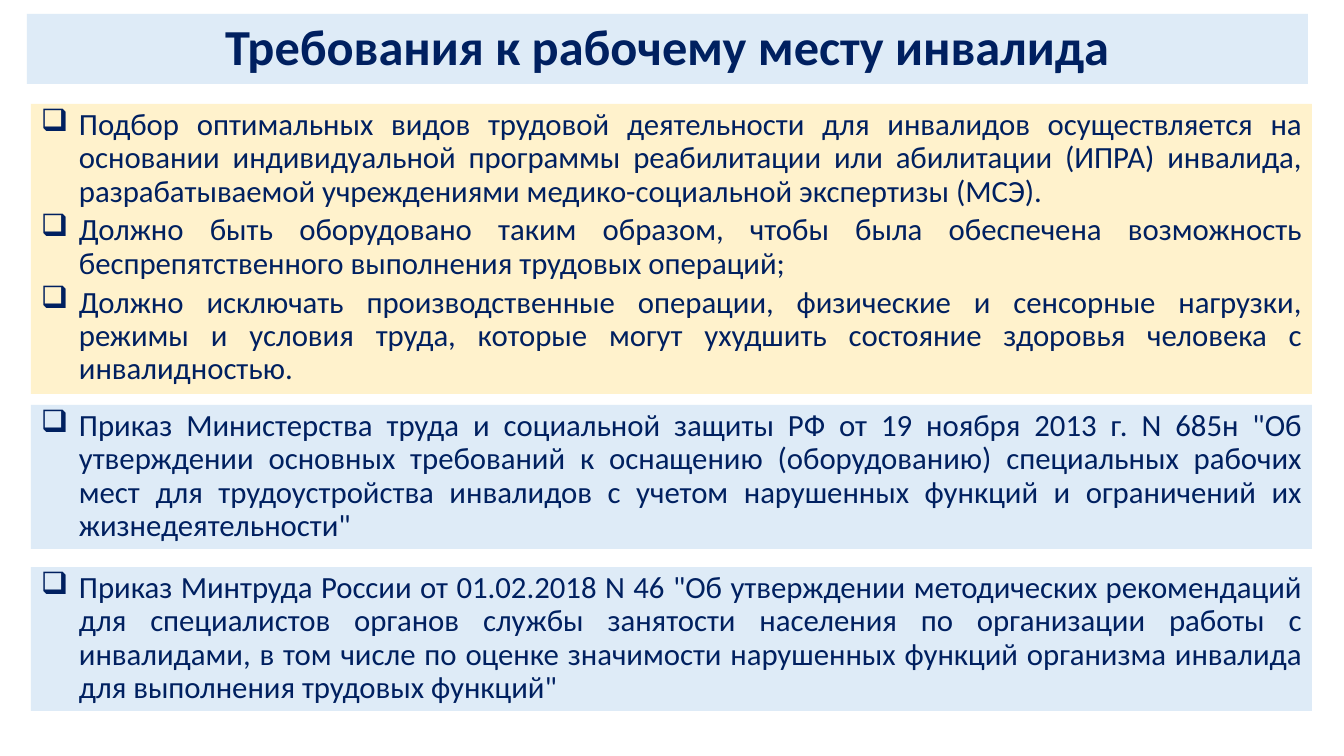
from lxml import etree
from pptx import Presentation
from pptx.dml.color import RGBColor
from pptx.enum import shapes, text
from pptx.oxml import ns
from pptx.util import Emu, Pt

SCALE = 914400 / 100.8
COLORS = {"navy": "002060", "blue": "DEEBF7", "cream": "FFF2CC"}
TITLE = "Требования к рабочему месту инвалида"
NEEDS = [
    "Подбор оптимальных видов трудовой деятельности для инвалидов осуществляется на основании индивидуальной программы реабилитации или абилитации (ИПРА) инвалида, разрабатываемой учреждениями медико-социальной экспертизы (МСЭ).",
    "Должно быть оборудовано таким образом, чтобы была обеспечена возможность беспрепятственного выполнения трудовых операций;",
    "Должно исключать производственные операции, физические и сенсорные нагрузки, режимы и условия труда, которые могут ухудшить состояние здоровья человека с инвалидностью.",
]
ORDERS = [
    'Приказ Министерства труда и социальной защиты РФ от 19 ноября 2013 г. N 685н "Об утверждении основных требований к оснащению (оборудованию) специальных рабочих мест для трудоустройства инвалидов с учетом нарушенных функций и ограничений их жизнедеятельности"',
    'Приказ Минтруда России от 01.02.2018 N 46 "Об утверждении методических рекомендаций для специалистов органов службы занятости населения по организации работы с инвалидами, в том числе по оценке значимости нарушенных функций организма инвалида для выполнения трудовых функций"',
]


def px(n):
    return Emu(round(n * SCALE))


def color(name):
    return RGBColor.from_string(COLORS[name])


def panel(slide, left, top, height, fill, anchor):
    box = slide.shapes.add_shape(
        shapes.MSO_SHAPE.RECTANGLE, px(left), px(top), px(1281), px(height))
    box.shadow.inherit = False
    box.fill.solid()
    box.fill.fore_color.rgb = color(fill)
    box.line.fill.background()
    frame = box.text_frame
    frame.word_wrap = True
    frame.vertical_anchor = anchor
    return frame


def style(para, words, size, align, bold=False):
    para.text = words
    para.alignment = align
    para.line_spacing = 0.9
    font = para.font
    font.name = "Calibri"
    font.size = Pt(size)
    font.bold = bold
    font.color.rgb = color("navy")


def bullet(para):
    props = para._p.get_or_add_pPr()
    props.set("marL", str(px(38)))
    props.set("indent", str(-px(38)))
    mark = etree.Element(ns.qn("a:buChar"), char="❑")
    props.find(ns.qn("a:defRPr")).addprevious(mark)


def points(slide, top, height, fill, items):
    frame = panel(slide, 31, top, height, fill, text.MSO_ANCHOR.TOP)
    for i, words in enumerate(items):
        para = frame.add_paragraph() if i else frame.paragraphs[0]
        para.space_before = para.space_after = Pt(2)
        style(para, words, 22, text.PP_ALIGN.JUSTIFY)
        bullet(para)


def main():
    deck = Presentation()
    deck.slide_width, deck.slide_height = px(1344), px(756)
    slide = deck.slides.add_slide(deck.slide_layouts[6])
    head = panel(slide, 27, 14, 70, "blue", text.MSO_ANCHOR.MIDDLE)
    style(head.paragraphs[0], TITLE, 36, text.PP_ALIGN.CENTER, True)
    points(slide, 104, 290, "cream", NEEDS)
    for i, order in enumerate(ORDERS):
        points(slide, 405 + 162 * i, 144, "blue", [order])
    deck.save("out.pptx")


if __name__ == "__main__":
    main()
